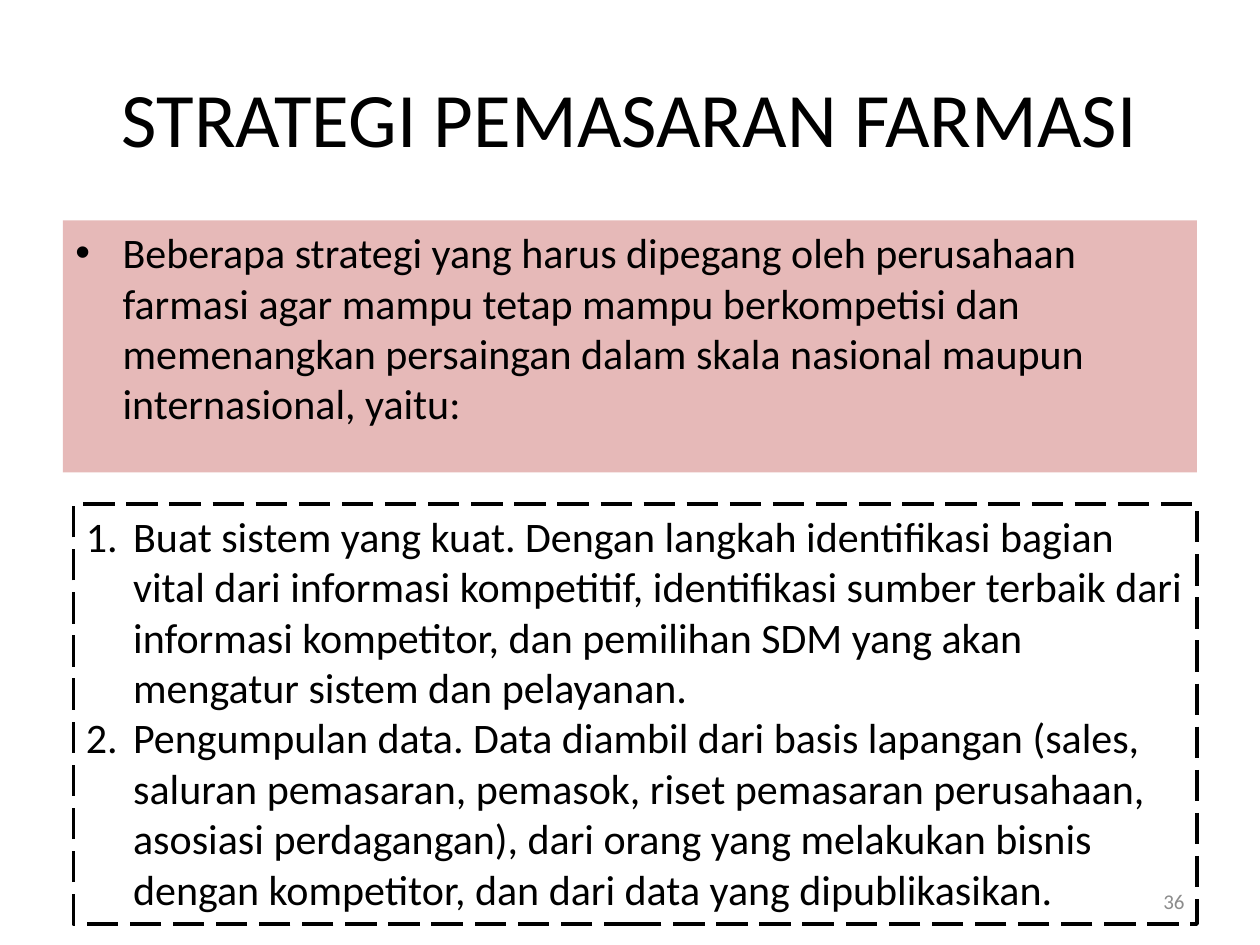
"""Build the pharmaceutical marketing strategy slide."""
from lxml import etree
from pptx import Presentation
from pptx.dml.color import RGBColor
from pptx.enum.dml import MSO_LINE
from pptx.enum.text import MSO_ANCHOR, PP_ALIGN
from pptx.oxml.ns import qn
from pptx.util import Pt

BLACK = RGBColor(0, 0, 0)
GRAY = RGBColor(0x8C, 0x8C, 0x8C)
PINK = RGBColor(0xE6, 0xB9, 0xB8)
LEFT, CENTER, RIGHT = PP_ALIGN.LEFT, PP_ALIGN.CENTER, PP_ALIGN.RIGHT
TOP, MIDDLE = MSO_ANCHOR.TOP, MSO_ANCHOR.MIDDLE
LONG_DASH = MSO_LINE.LONG_DASH
INDENT = Pt(27)

BULLET = ("a:buChar", {"char": "•"})
NUMBER = ("a:buAutoNum", {"type": "arabicPeriod"})

TITLE = "STRATEGI PEMASARAN FARMASI"
INTRO = [
    "Beberapa strategi yang harus dipegang oleh perusahaan farmasi agar mampu "
    "tetap mampu berkompetisi dan memenangkan persaingan dalam skala nasional "
    "maupun internasional, yaitu:",
]
STEPS = [
    "Buat sistem yang kuat. Dengan langkah identifikasi bagian vital dari "
    "informasi kompetitif, identifikasi sumber terbaik dari informasi "
    "kompetitor, dan pemilihan SDM yang akan mengatur sistem dan pelayanan.",
    "Pengumpulan data. Data diambil dari basis lapangan (sales, saluran "
    "pemasaran, pemasok, riset pemasaran perusahaan, asosiasi perdagangan), "
    "dari orang yang melakukan bisnis dengan kompetitor, dan dari data yang "
    "dipublikasikan.",
]
PAGE = "36"


def place(sp, box):
    for name, value in zip(("left", "top", "width", "height"), box):
        setattr(sp, name, Pt(value))


def write(sp, lines, size, align=LEFT, anchor=TOP, color=BLACK, marker=None, before=0):
    tf = sp.text_frame
    tf.word_wrap = True
    tf.vertical_anchor = anchor
    for i, line in enumerate(lines):
        p = tf.add_paragraph() if i else tf.paragraphs[0]
        p.alignment = align
        p.space_before = Pt(before)
        r = p.add_run()
        r.text = line
        for name, value in {"name": "Calibri", "size": Pt(size)}.items():
            setattr(r.font, name, value)
        r.font.color.rgb = color
        if marker:
            tag, attrs = marker
            pPr = p._p.get_or_add_pPr()
            pPr.set("marL", str(INDENT))
            pPr.set("indent", str(-INDENT))
            etree.SubElement(pPr, qn("a:buFont"), typeface="Arial" if tag == "a:buChar" else "+mj-lt")
            etree.SubElement(pPr, qn(tag), attrs)


def add_box(s, box):
    sp = s.shapes.add_textbox(0, 0, 0, 0)
    place(sp, box)
    return sp


def main():
    prs = Presentation()
    prs.slide_width, prs.slide_height = Pt(720), Pt(540)
    s = prs.slides.add_slide(prs.slide_layouts[5])

    title = s.shapes.title
    place(title, (36, 21.6, 648, 90))
    write(title, [TITLE], 44, CENTER, MIDDLE)

    intro = add_box(s, (36, 126, 648, 144))
    intro.fill.solid()
    intro.fill.fore_color.rgb = PINK
    write(intro, INTRO, 24, marker=BULLET, before=4.8)

    steps = add_box(s, (42, 288, 642, 240))
    steps.line.color.rgb = BLACK
    steps.line.width = Pt(2.25)
    steps.line.dash_style = LONG_DASH
    write(steps, STEPS, 24, marker=NUMBER)

    page = add_box(s, (516, 500.5, 168, 28.75))
    write(page, [PAGE], 12, RIGHT, MIDDLE, GRAY)

    prs.save("out.pptx")


if __name__ == "__main__":
    main()
